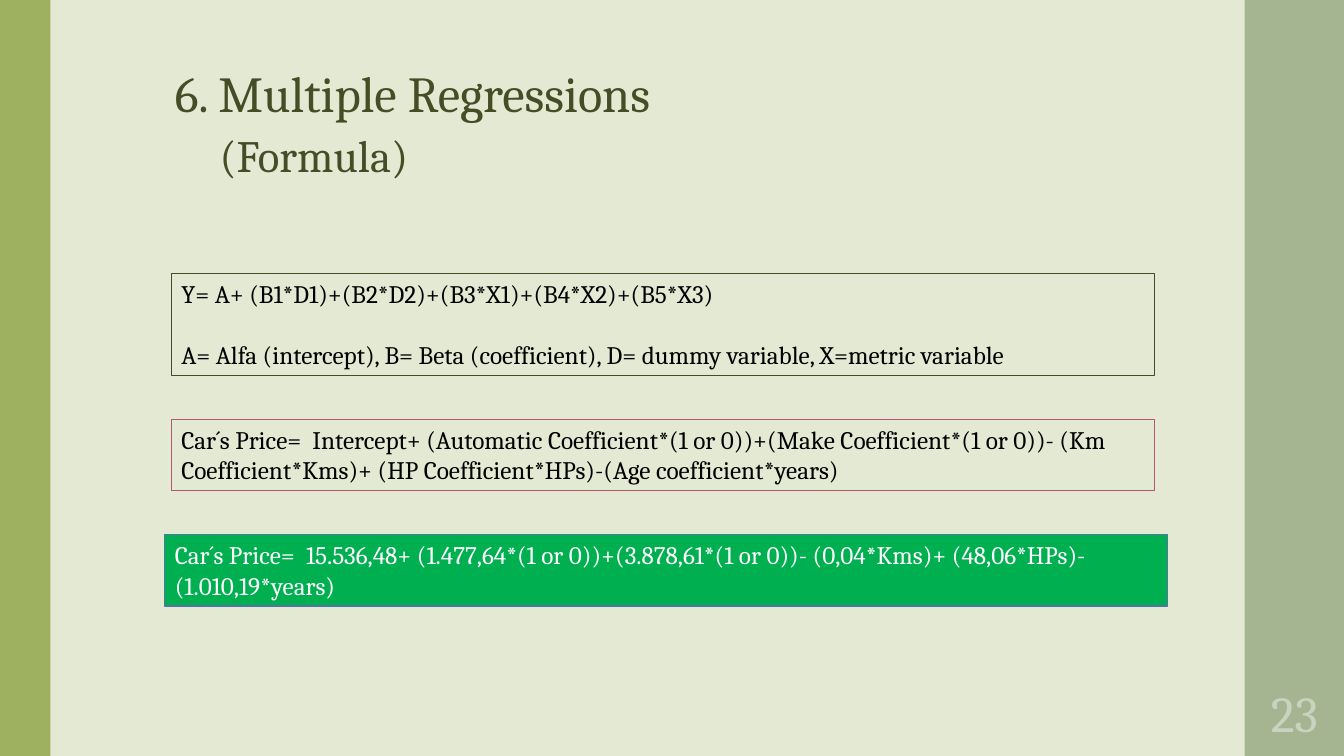
"""Build the slide showing the multiple regression formula for a car's price."""
from pptx import Presentation
from pptx.dml.color import RGBColor
from pptx.enum.shapes import MSO_SHAPE
from pptx.enum.text import MSO_ANCHOR, PP_ALIGN
from pptx.util import Pt

COLORS = {
    "background": "E4E9D3", "right band": "A5B592", "left band": "9EB160",
    "title": "444D26", "text": "000000", "general": "444D26",
    "named": "B55475", "result": "00B050", "result line": "4E75A3",
    "result text": "FFFFFF", "page number": "C9D3BF",
}


def color(name):
    return RGBColor.from_string(COLORS[name])


def write(frame, lines, ink, format_values):
    frame.word_wrap = True
    for index, (text, size, paragraph_values) in enumerate(lines):
        paragraph = frame.paragraphs[0] if index == 0 else frame.add_paragraph()
        for key, value in {**format_values, **paragraph_values}.items():
            setattr(paragraph, key, value)
        run = paragraph.add_run()
        run.text = text
        for key, value in {"name": "Cambria", "size": Pt(size)}.items():
            setattr(run.font, key, value)
        run.font.color.rgb = color(ink)


presentation = Presentation()
presentation.slide_width, presentation.slide_height = Pt(960), Pt(540)
slide = presentation.slides.add_slide(presentation.slide_layouts[6])
slide.background.fill.solid()
slide.background.fill.fore_color.rgb = color("background")

for band_name, left, width in [("right band", 889, 71), ("left band", 0, 36)]:
    band = slide.shapes.add_shape(MSO_SHAPE.RECTANGLE, Pt(left), 0, Pt(width), Pt(540))
    band.shadow.inherit = False
    band.fill.solid()
    band.fill.fore_color.rgb = color(band_name)
    band.line.fill.background()

formulas = [
    (122.4, 195.6, 702, 72.7, None, "general", "text", [
        ("Y= A+ (B1*D1)+(B2*D2)+(B3*X1)+(B4*X2)+(B5*X3)", 18, {}),
        ("A= Alfa (intercept), B= Beta (coefficient), D= dummy variable, X=metric variable",
         18, {"space_before": Pt(21.8)}),
    ]),
    (122.4, 299.6, 702, 50.9, None, "named", "text", [
        ("Car´s Price=  Intercept+ (Automatic Coefficient*(1 or 0))+(Make Coefficient*(1 or 0))"
         "- (Km Coefficient*Kms)+ (HP Coefficient*HPs)-(Age coefficient*years)", 18, {}),
    ]),
    (117.8, 382, 716.4, 50.9, "result", "result line", "result text", [
        ("Car´s Price=  15.536,48+ (1.477,64*(1 or 0))+(3.878,61*(1 or 0))"
         "- (0,04*Kms)+ (48,06*HPs)-(1.010,19*years)", 18, {}),
    ]),
]
for left, top, width, height, fill, outline, ink, lines in formulas:
    formula = slide.shapes.add_shape(
        MSO_SHAPE.RECTANGLE, Pt(left), Pt(top), Pt(width), Pt(height))
    formula.shadow.inherit = False
    if fill:
        formula.fill.solid()
        formula.fill.fore_color.rgb = color(fill)
    else:
        formula.fill.background()
    formula.line.color.rgb = color(outline)
    formula.line.width = Pt(0.75)
    formula.text_frame.vertical_anchor = MSO_ANCHOR.TOP
    write(formula.text_frame, lines, ink, {"alignment": PP_ALIGN.LEFT})

title = slide.shapes.add_textbox(Pt(117.8), Pt(40.6), Pt(444.2), Pt(147.6))
write(title.text_frame, [
    ("6. Multiple Regressions", 36, {}),
    ("(Formula)", 32, {"space_before": Pt(4)}),
], "title", {"alignment": PP_ALIGN.LEFT})
title.text_frame.paragraphs[1]._p.get_or_add_pPr().set("marL", str(Pt(32)))

page_number = slide.shapes.add_textbox(Pt(889), Pt(486), Pt(71), Pt(46))
page_number.text_frame.vertical_anchor = MSO_ANCHOR.MIDDLE
write(page_number.text_frame, [("23", 36, {})], "page number",
      {"alignment": PP_ALIGN.CENTER})

presentation.save("out.pptx")
